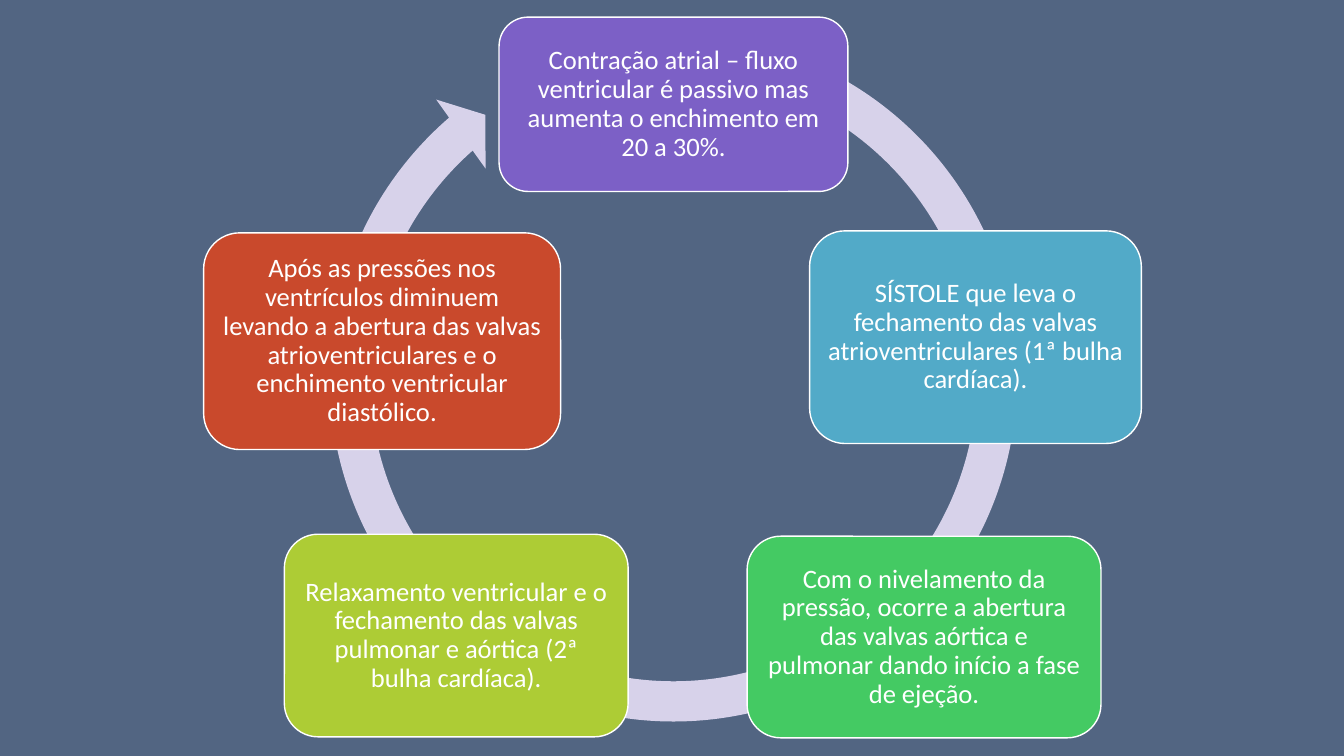
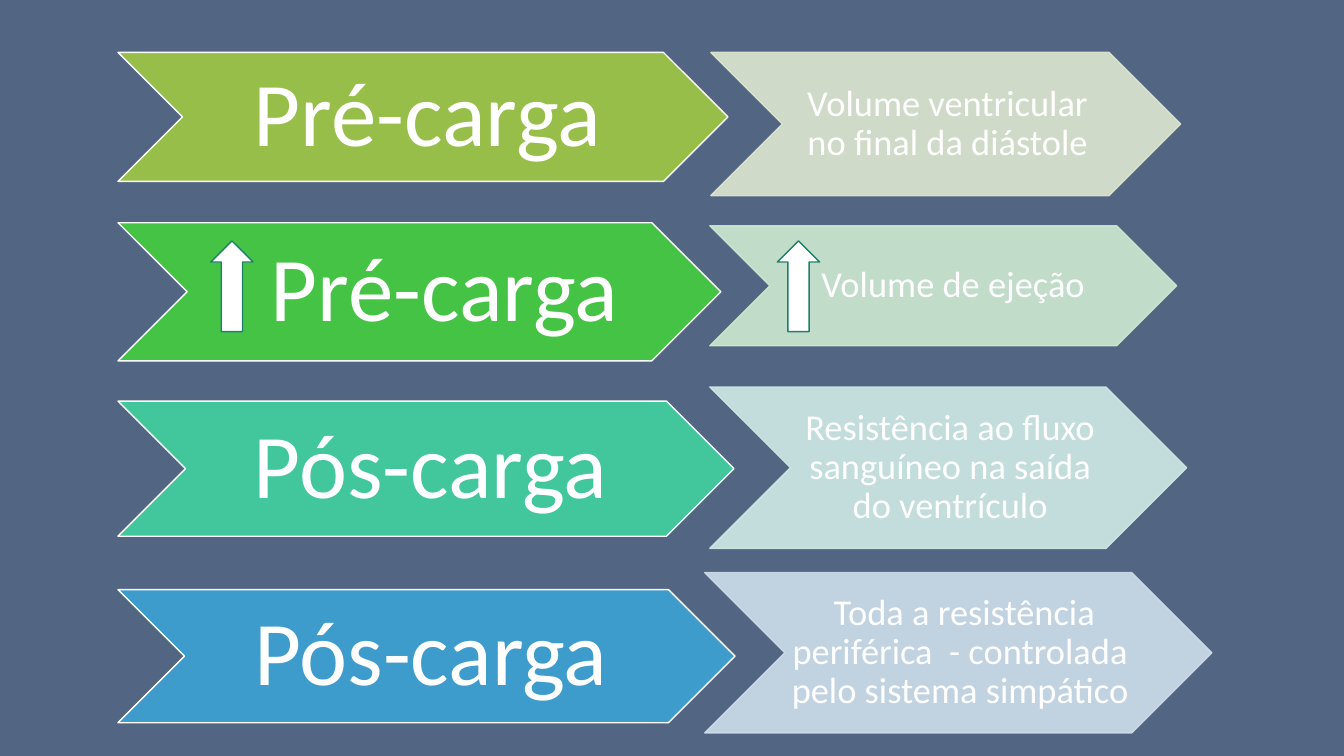
from dataclasses import dataclass

from lxml import etree
from pptx import Presentation
from pptx import util as u
from pptx.dml import color
from pptx.enum import shapes, text
from pptx.oxml import ns

SCALE = 9144  # EMU per px, 100 px to the inch


@dataclass(frozen=True)
class Theme:
    background: str = "526582"
    white: str = "FFFFFF"
    ring: str = "D7D2EA"
    marker_line: str = "1E8168"
    font: str = "Calibri"
    card_size: int = 19
    label_size: int = 65
    detail_size: int = 26
    line_width: int = 1
    line_spacing: float = 0.9
    detail_opacity: int = 90


THEME = Theme()
SLIDE_SIZE = (1333, 750)
KIND = shapes.MSO_SHAPE

# Cycle: left, top, width, height inside the diagram, fill, wording
CYCLE_BOX = (202, 12, 930, 726)
RING = (103, 0, 726, 726)
RING_THICKNESS, RING_HEAD = 0.055, 0.058
RING_ANGLES = (5.51, 228.93, 290.18)  # degrees: head, end, start
CARDS = (
    (293, 5, 346, 173, "7C60C6",
     "Contração atrial – fluxo ventricular é passivo mas aumenta o enchimento em 20 a 30%."),
    (601, 217, 329, 211, "52AAC8",
     "SÍSTOLE que leva o fechamento das valvas atrioventriculares (1ª bulha cardíaca)."),
    (539, 520, 351, 200, "44CA63",
     "Com o nivelamento da pressão, ocorre a abertura das valvas aórtica e pulmonar "
     "dando início a fase de ejeção."),
    (80, 518, 341, 201, "ADCC35",
     "Relaxamento ventricular e o fechamento das valvas pulmonar e aórtica (2ª bulha cardíaca)."),
    (0, 219, 354, 215, "C9492C",
     "Após as pressões nos ventrículos diminuem levando a abertura das valvas "
     "atrioventriculares e o enchimento ventricular diastólico."),
)

# Rows: top, then label and detail as (box in row, fill, wording, first-line indent),
# then the boxes of the up arrows
ROWS_LEFT = 117
ROWS = (
    (52,
     ((0, 0, 605, 128), "97BE49", "Pré-carga", 0),
     ((588, 0, 466, 142), "DDE8D0", "Volume ventricular no final da diástole", 0), ()),
    (221,
     ((0, 0, 598, 137), "45C345", "Pré-carga", 41),
     ((587, 3, 463, 119), "CFE9D2", "Volume de ejeção", 16),
     ((92, 18, 42, 90), (654, 18, 42, 90))),
    (384,
     ((0, 14, 611, 134), "41C79B", "Pós-carga", 0),
     ((587, 0, 473, 160), "CFEBE5", "Resistência ao fluxo sanguíneo na saída do ventrículo", 0), ()),
    (568,
     ((0, 17, 612, 132), "3D9CCC", "Pós-carga", 0),
     ((582, 0, 503, 159), "CEDEEC",
      "Toda a resistência periférica  - controlada pelo sistema simpático", 8), ()),
)


def px(length):
    return u.Emu(round(length * SCALE))


def rgb(value):
    return color.RGBColor.from_string(value)


def add_part(slide, kind, origin, box, fill, line=None, opacity=100):
    """Place a preset shape at a box measured from the origin of its region."""
    left, top, width, height = box
    shape = slide.shapes.add_shape(
        kind, px(origin[0] + left), px(origin[1] + top), px(width), px(height))
    shape.shadow.inherit = False
    shape.fill.solid()
    shape.fill.fore_color.rgb = rgb(fill)
    if line:
        shape.line.color.rgb = rgb(line)
        shape.line.width = u.Pt(THEME.line_width)
    else:
        shape.line.fill.background()
    if opacity < 100:
        for color_node in shape.element.spPr.iter(ns.qn("a:srgbClr")):
            etree.SubElement(color_node, ns.qn("a:alpha"), val=str(opacity * 1000))
    return shape


def write_text(shape, wording, *, size, margins, first_line=0):
    """Centre the wording in a shape; margins are left, top, right, bottom."""
    frame = shape.text_frame
    frame.word_wrap = True
    frame.vertical_anchor = text.MSO_ANCHOR.MIDDLE
    frame.margin_left, frame.margin_top, frame.margin_right, frame.margin_bottom = map(px, margins)
    paragraph = frame.paragraphs[0]
    paragraph.alignment = text.PP_ALIGN.CENTER
    paragraph.line_spacing = THEME.line_spacing
    if first_line:
        paragraph._p.get_or_add_pPr().set("indent", str(px(first_line)))
    run = paragraph.add_run()
    run.text = wording
    run.font.name = THEME.font
    run.font.size = u.Pt(size)
    run.font.color.rgb = rgb(THEME.white)


def new_slide(presentation):
    slide = presentation.slides.add_slide(presentation.slide_layouts[6])
    slide.background.fill.solid()
    slide.background.fill.fore_color.rgb = rgb(THEME.background)
    return slide


def draw_cycle(slide, box):
    # Ring arrow behind the cards
    ring = add_part(slide, KIND.CIRCULAR_ARROW, box, RING, THEME.ring)
    angles = [degrees * 0.6 for degrees in RING_ANGLES]
    for index, value in enumerate((RING_THICKNESS, *angles, RING_HEAD)):
        ring.adjustments[index] = value
    # Steps of the cycle
    for *card_box, fill, wording in CARDS:
        card = add_part(slide, KIND.ROUNDED_RECTANGLE, box, card_box, fill, THEME.white)
        write_text(card, wording, size=THEME.card_size, margins=(8, 8, 8, 8))


def draw_row(slide, origin, label, detail, arrows):
    # Strong label chevron
    box, fill, wording, first_line = label
    chevron = add_part(slide, KIND.CHEVRON, origin, box, fill, THEME.white)
    write_text(chevron, wording, size=THEME.label_size, margins=(9, 5, 0, 5),
               first_line=first_line)
    # Pale detail chevron
    box, fill, wording, first_line = detail
    chevron = add_part(slide, KIND.CHEVRON, origin, box, fill, fill, THEME.detail_opacity)
    write_text(chevron, wording, size=THEME.detail_size, margins=(4, 2, 0, 2),
               first_line=first_line)
    # Increase markers
    for arrow_box in arrows:
        add_part(slide, KIND.UP_ARROW, origin, arrow_box, THEME.white, THEME.marker_line)


def main():
    presentation = Presentation()
    presentation.slide_width, presentation.slide_height = map(px, SLIDE_SIZE)
    draw_cycle(new_slide(presentation), CYCLE_BOX)
    load_slide = new_slide(presentation)
    for top, label, detail, arrows in ROWS:
        draw_row(load_slide, (ROWS_LEFT, top), label, detail, arrows)
    presentation.save("out.pptx")


if __name__ == "__main__":
    main()
